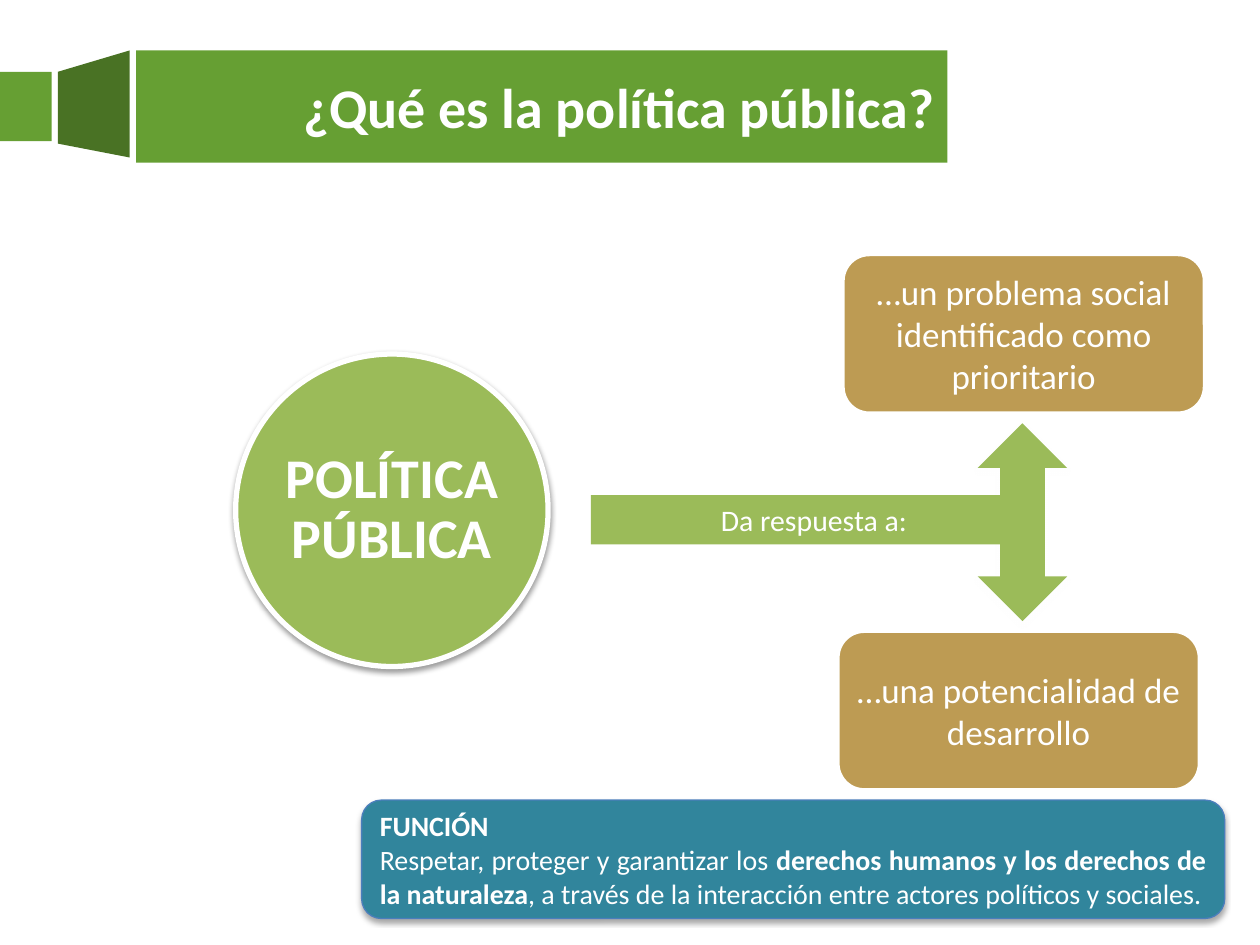
from lxml.etree import SubElement as Sub
from pptx import Presentation
from pptx.dml.color import RGBColor
from pptx.enum.shapes import MSO_SHAPE as Kind
from pptx.enum.text import MSO_ANCHOR as Anchor, PP_ALIGN as Align
from pptx.oxml.ns import qn
from pptx.util import Inches, Pt

WHITE, LIME, GREEN, DARK = "FFFFFF", "9BBB59", "669F33", "497224"
GOLD, TEAL, BLUE = "BD9B53", "31859C", "4B7EBC"


def paint(item, color):
    """Give a fill or a font a solid colour."""
    item.solid()
    item.fore_color.rgb = RGBColor.from_string(color)


def style(shape, fill, line=None, width=0):
    """Set fill and outline, and drop the theme shadow."""
    shape.shadow.inherit = False
    paint(shape.fill, fill)
    if line:
        paint(shape.line.fill, line)
        shape.line.width = Pt(width)
    else:
        shape.line.fill.background()
    return shape


def block(slide, kind, box, fill, line=None, width=0):
    """Add a preset shape in a box given in inches."""
    shape = slide.shapes.add_shape(kind, *map(Inches, box))
    return style(shape, fill, line, width)


def shade(shape, color, alpha, dist=1.8):
    """Cast a soft shadow straight down."""
    effects = shape._element.spPr.find(qn("a:effectLst"))
    outer = Sub(effects, qn("a:outerShdw"), blurRad=str(Pt(3.1)),
                dist=str(Pt(dist)), dir="5400000", rotWithShape="0")
    tint = Sub(outer, qn("a:srgbClr"), val=color)
    Sub(tint, qn("a:alpha"), val=str(alpha * 1000))


def write(shape, paras, size, inset=None):
    """Write paragraphs of (alignment, runs), each run being (text, bold)."""
    frame = shape.text_frame
    frame.word_wrap = True
    frame.vertical_anchor = Anchor.MIDDLE
    if inset is not None:
        frame.margin_left = frame.margin_right = Inches(inset)
        frame.margin_top = frame.margin_bottom = Inches(inset)
    for i, (align, runs) in enumerate(paras):
        para = frame.paragraphs[0] if i == 0 else frame.add_paragraph()
        para.alignment = align
        for text, bold in runs:
            run = para.add_run()
            run.text = text
            run.font.name = "Calibri"
            run.font.size = Pt(size)
            run.font.bold = bold
            paint(run.font.fill, WHITE)


def answer(slide, left, top, text):
    """Add a gold box with one thing that policy responds to."""
    box = block(slide, Kind.ROUNDED_RECTANGLE, (left, top, 2.87, 1.26),
                GOLD, WHITE, 2)
    write(box, [(Align.CENTER, [(text, False)])], 20, 0)


def circle(slide):
    """Add the circle with the main concept."""
    disc = block(slide, Kind.OVAL, (1.87, 2.81, 2.48, 2.48), LIME, WHITE, 3)
    shade(disc, "000000", 38, 1.6)
    write(disc, [(Align.CENTER, [("POLÍTICA PÚBLICA", True)])], 32, 0)
    disc.text_frame.paragraphs[0].line_spacing = 0.9


def purpose(slide):
    """Add the teal box that states the function."""
    box = block(slide, Kind.ROUNDED_RECTANGLE, (2.87, 6.35, 6.85, 0.94),
                TEAL, BLUE, 0.75)
    shade(box, "000000", 35)
    write(box, [
        (Align.LEFT, [("FUNCIÓN", True)]),
        (Align.JUSTIFY, [
            ("Respetar, proteger y garantizar los ", False),
            ("derechos humanos y los derechos de la naturaleza", True),
            (", a través de la interacción entre actores políticos y "
             "sociales.", False)]),
    ], 16)


def banner(slide):
    """Add the folded title ribbon."""
    points = [(0.46, 1.14), (1.03, 1.25), (1.03, 0.4), (0.46, 0.57)]
    first, *rest = [(Inches(x), Inches(y)) for x, y in points]
    pen = slide.shapes.build_freeform(*first)
    pen.add_line_segments(rest, close=True)
    style(pen.convert_to_shape(), DARK)
    title = block(slide, Kind.RECTANGLE, (1.08, 0.4, 6.44, 0.89), GREEN)
    write(title, [(Align.RIGHT, [("¿Qué es la política pública?", True)])], 32)
    block(slide, Kind.RECTANGLE, (-0.04, 0.57, 0.45, 0.55), GREEN)


def main():
    """Build and save the slide."""
    deck = Presentation()
    deck.slide_width, deck.slide_height = Inches(10), Inches(7.5)
    slide = deck.slides.add_slide(deck.slide_layouts[6])
    answer(slide, 6.69, 2.02,
           "…un problema social identificado como prioritario")
    circle(slide)
    answer(slide, 6.65, 5.01, "…una potencialidad de desarrollo")
    arrow = block(slide, Kind.UP_DOWN_ARROW, (7.76, 3.36, 0.71, 1.57), LIME)
    shade(arrow, WHITE, 35)
    purpose(slide)
    bar = block(slide, Kind.RECTANGLE, (4.69, 3.93, 3.54, 0.39), LIME)
    write(bar, [(Align.CENTER, [("Da respuesta a:", False)])], 17)
    banner(slide)
    deck.save("out.pptx")


if __name__ == "__main__":
    main()
